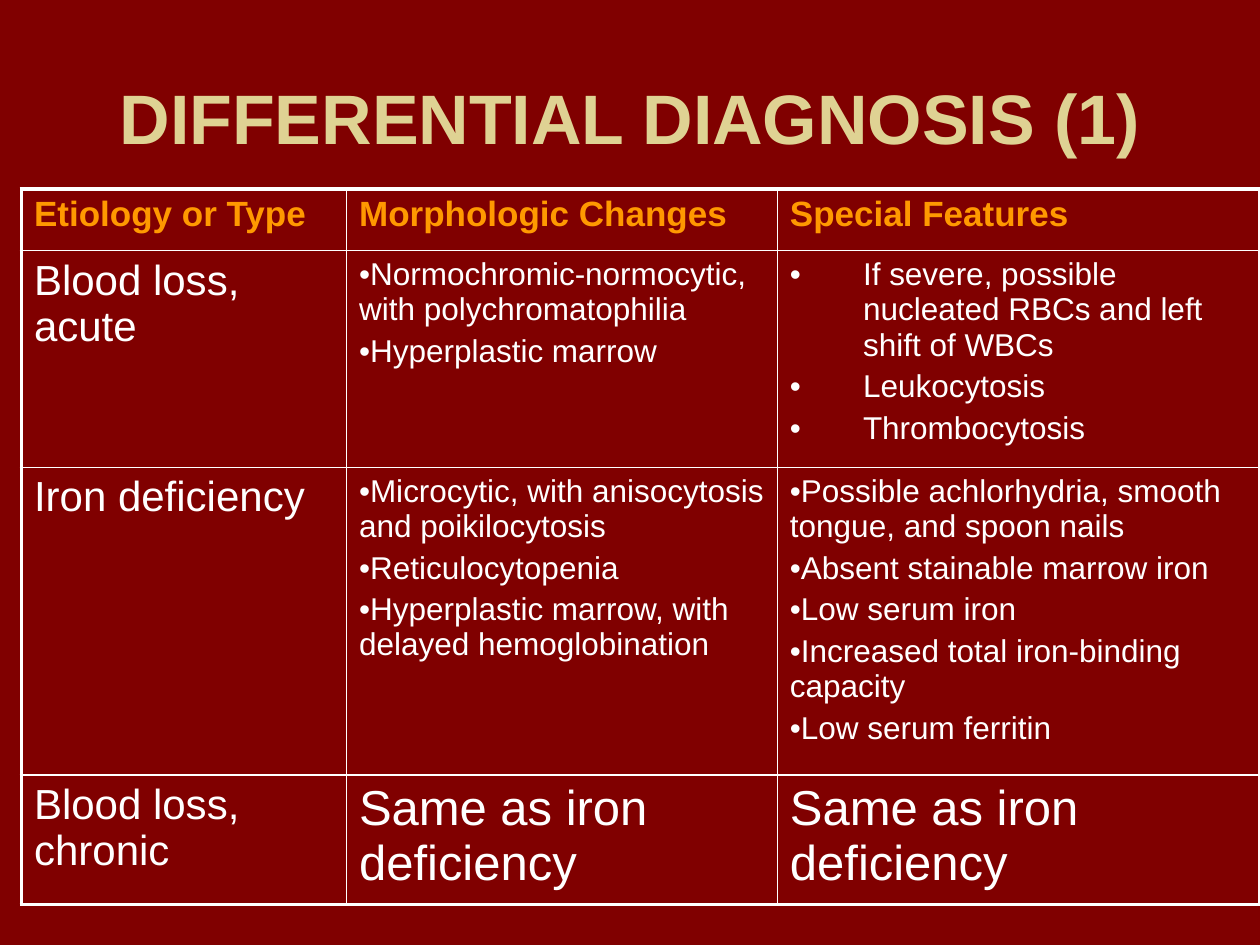
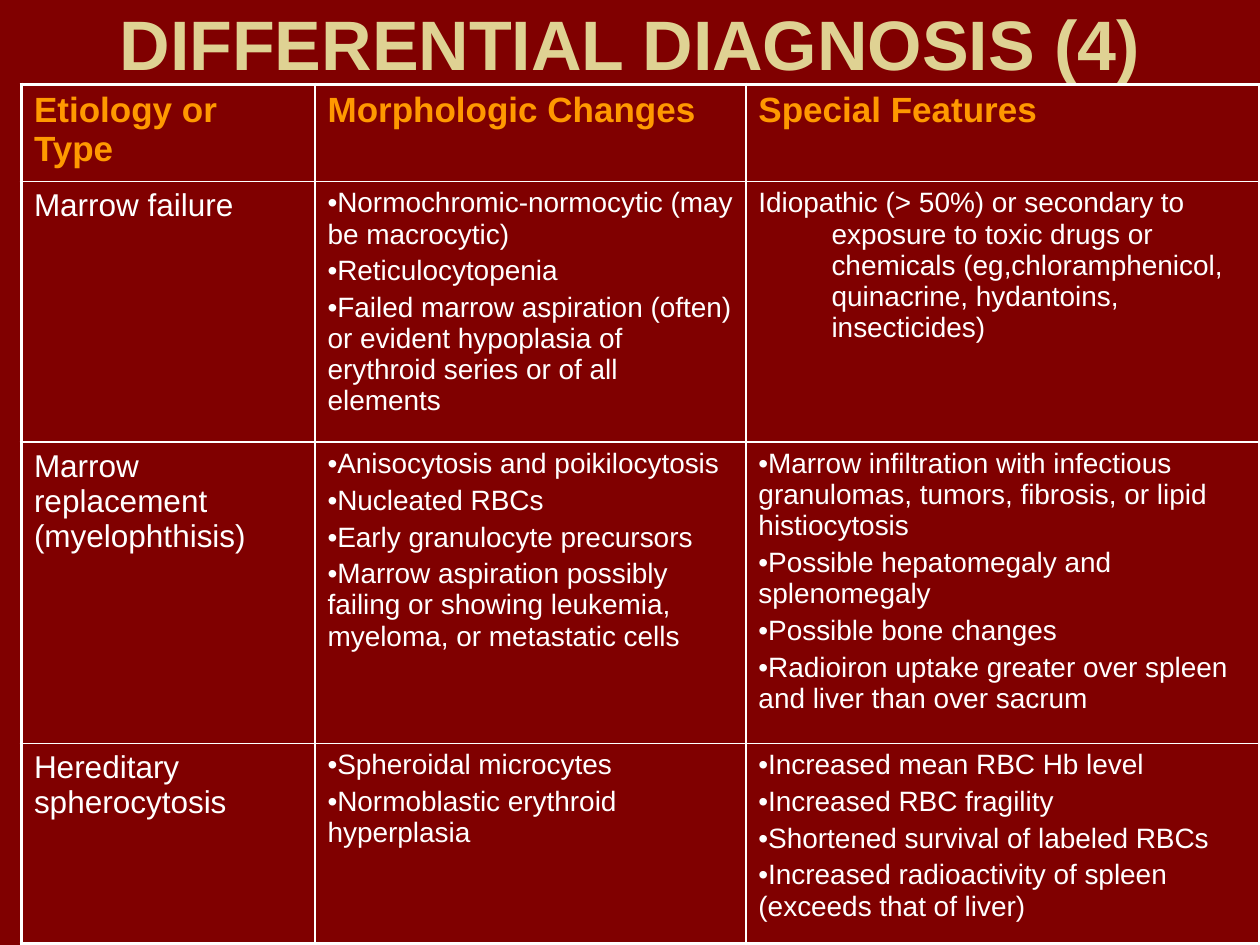
from lxml import etree
from pptx import Presentation
from pptx.dml.color import RGBColor
from pptx.enum import text as t
from pptx.oxml.ns import qn
from pptx.util import Inches, Pt

HUES = {"back": "800000", "title": "DFD293", "head": "FF9900", "text": "FFFFFF"}
FONT = "Arial"
HEAD = ["Etiology or Type", "Morphologic Changes", "Special Features"]
THIN, THICK = 1, 2.25
LEFT = 0.17

# A list is a bulleted cell; "hang" names the cells with a hanging indent.
PAGES = [
    {
        "title": "DIFFERENTIAL DIAGNOSIS (1)", "box": (0.5, 0.3, 9, 1.25),
        "top": 1.5, "cols": (2.58, 3.42, 3.83), "rows": (0.49, 1.72, 2.44, 1.03),
        "type": 24, "list": 18, "plain": 28, "hang": {(1, 2)},
        "body": [
            ["Blood loss, acute",
             ["Normochromic-normocytic, with polychromatophilia",
              "Hyperplastic marrow"],
             ["If severe, possible nucleated RBCs and left shift of WBCs",
              "Leukocytosis", "Thrombocytosis"]],
            ["Iron deficiency",
             ["Microcytic, with anisocytosis and poikilocytosis",
              "Reticulocytopenia",
              "Hyperplastic marrow, with delayed hemoglobination"],
             ["Possible achlorhydria, smooth tongue, and spoon nails",
              "Absent stainable marrow iron", "Low serum iron",
              "Increased total iron-binding capacity", "Low serum ferritin"]],
            ["Blood loss, chronic", "Same as iron deficiency",
             "Same as iron deficiency"],
        ],
    },
    {
        "title": "DIFFERENTIAL DIAGNOSIS (4)", "box": (0.5, 0, 9, 0.67),
        "top": 0.67, "cols": (2.33, 3.42, 4.08), "rows": (0.77, 2.07, 2.39, 1.59),
        "type": 18, "list": 16, "plain": 16, "hang": {(1, 2)},
        "body": [
            ["Marrow failure",
             ["Normochromic-normocytic (may be macrocytic)",
              "Reticulocytopenia",
              "Failed marrow aspiration (often) or evident hypoplasia of "
              "erythroid series or of all elements"],
             "Idiopathic (> 50%) or secondary to exposure to toxic drugs or "
             "chemicals (eg,chloramphenicol, quinacrine, hydantoins, insecticides)"],
            ["Marrow replacement (myelophthisis)",
             ["Anisocytosis and poikilocytosis", "Nucleated RBCs",
              "Early granulocyte precursors",
              "Marrow aspiration possibly failing or showing leukemia, "
              "myeloma, or metastatic cells"],
             ["Marrow infiltration with infectious granulomas, tumors, "
              "fibrosis, or lipid histiocytosis",
              "Possible hepatomegaly and splenomegaly", "Possible bone changes",
              "Radioiron uptake greater over spleen and liver than over sacrum"]],
            ["Hereditary spherocytosis",
             ["Spheroidal microcytes", "Normoblastic erythroid hyperplasia"],
             ["Increased mean RBC Hb level", "Increased RBC fragility",
              "Shortened survival of labeled RBCs",
              "Increased radioactivity of spleen (exceeds that of liver)"]],
        ],
    },
]


def write(frame, words, size, hue, bold=False, align=t.PP_ALIGN.LEFT,
          gap=0, hang=0):
    """Fill a text frame; a list of words becomes bulleted paragraphs.

    gap is the space before in percent, hang the hanging indent in inches.
    """
    dots = isinstance(words, list)
    for i, line in enumerate(words if dots else [words]):
        para = frame.paragraphs[0] if i == 0 else frame.add_paragraph()
        para.alignment = align
        run = para.add_run()
        run.text = line
        run.font.name, run.font.size, run.font.bold = FONT, Pt(size), bold
        run.font.color.rgb = RGBColor.from_string(HUES[hue])
        props = para._p.get_or_add_pPr()
        props.set("marL", str(Inches(hang)))
        props.set("indent", str(-Inches(hang)))
        space = etree.SubElement(props, qn("a:spcBef"))
        etree.SubElement(space, qn("a:spcPct"), val=str(gap * 1000))
        if dots:
            etree.SubElement(props, qn("a:buFont"), typeface=FONT)
            etree.SubElement(props, qn("a:buChar"), char="•")


def frame_cell(cell, sides):
    """Draw the cell borders; sides maps L, R, T and B to widths in points."""
    props = cell._tc.get_or_add_tcPr()
    for i, (side, width) in enumerate(sides.items()):
        line = etree.Element(qn("a:ln" + side), w=str(Pt(width)))
        fill = etree.SubElement(line, qn("a:solidFill"))
        etree.SubElement(fill, qn("a:srgbClr"), val=HUES["text"])
        props.insert(i, line)


deck = Presentation()
deck.slide_width, deck.slide_height = Inches(10), Inches(7.5)
back = deck.slide_master.background.fill
back.solid()
back.fore_color.rgb = RGBColor.from_string(HUES["back"])

for page in PAGES:
    slide = deck.slides.add_slide(deck.slide_layouts[5])
    title = slide.shapes.title
    title.left, title.top, title.width, title.height = map(Inches, page["box"])
    title.text_frame.auto_size = t.MSO_AUTO_SIZE.NONE
    title.text_frame.vertical_anchor = t.MSO_ANCHOR.MIDDLE
    write(title.text_frame, page["title"], 40, "title", bold=True,
          align=t.PP_ALIGN.CENTER)

    cols, rows = page["cols"], page["rows"]
    grid = slide.shapes.add_table(
        len(rows), len(cols), Inches(LEFT), Inches(page["top"]),
        Inches(sum(cols)), Inches(sum(rows))).table
    grid.first_row = grid.horz_banding = False
    for col, width in zip(grid.columns, cols):
        col.width = Inches(width)
    for row, height in zip(grid.rows, rows):
        row.height = Inches(height)

    for r, line in enumerate([HEAD] + page["body"]):
        for c, words in enumerate(line):
            cell = grid.cell(r, c)
            cell.fill.background()
            if r == 0:
                size = 20
            elif c == 0:
                size = page["type"]
            else:
                size = page["list" if isinstance(words, list) else "plain"]
            write(cell.text_frame, words, size, "text" if r else "head",
                  bold=r == 0, gap=20,
                  hang=0.58 if (r, c) in page["hang"] else 0)
            frame_cell(cell, {
                "L": THICK if c == 0 else THIN,
                "R": THICK if c == len(cols) - 1 else THIN,
                "T": THICK if r == 0 else THIN,
                "B": THICK if r == len(rows) - 1 else THIN,
            })

deck.save("out.pptx")
